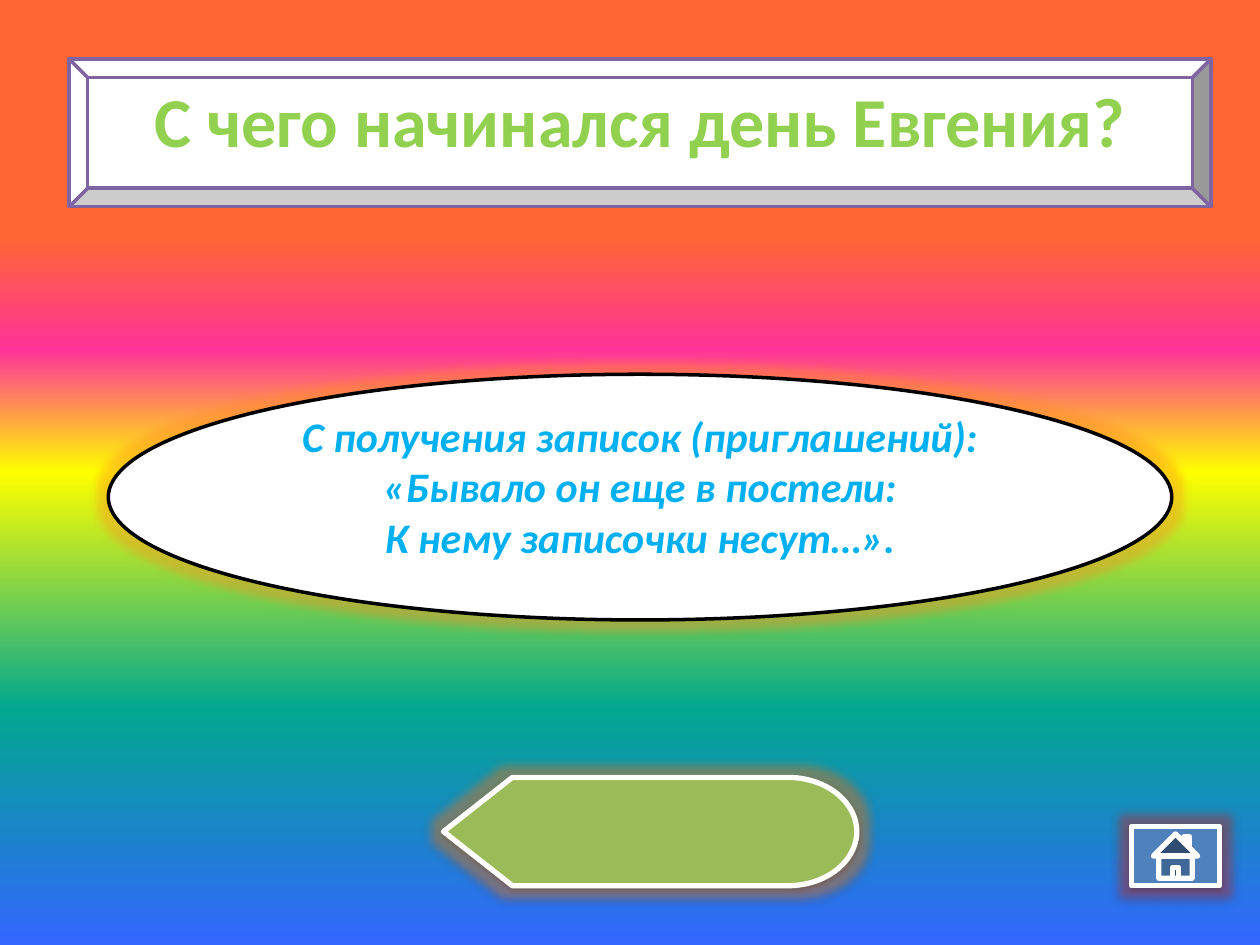
from dataclasses import dataclass
from typing import Optional

from lxml.etree import SubElement as Sub
from pptx import Presentation
from pptx.dml.color import RGBColor as RGB
from pptx.enum.shapes import MSO_SHAPE as Kind
from pptx.enum.text import MSO_ANCHOR as Anchor, PP_ALIGN as Align
from pptx.oxml.ns import qn
from pptx.util import Inches, Pt


@dataclass(frozen=True)
class Theme:
    font: str = "Calibri"
    white: str = "FFFFFF"
    black: str = "000000"
    purple: str = "8064A2"
    green: str = "9BBB59"
    blue: str = "4F81BD"
    lime: str = "92D050"
    sky: str = "00B0F0"
    orange: str = "FF8A24"
    red: str = "D03A36"
    head: int = 40
    body: int = 24
    # Background stops: percent and colour, from top to bottom
    stops: tuple = ((0, "FF6633"), (25, "FF6633"), (37, "FF3399"),
                    (50, "FFFF00"), (75, "01A78F"), (100, "3366FF"))


@dataclass(frozen=True)
class Text:
    lines: tuple[str, ...]
    size: int
    color: str
    slant: bool = False


@dataclass(frozen=True)
class Part:
    kind: Kind
    box: tuple[float, float, float, float]
    fill: str
    line: str
    width: float
    glow: Optional[str] = None
    shade: bool = False
    text: Optional[Text] = None


T = Theme()


def tint(node, color: str, alpha: int = 100) -> None:
    clr = Sub(node, qn("a:srgbClr"), val=color)
    if alpha < 100:
        Sub(clr, qn("a:alpha"), val=str(alpha * 1000))


def paint(slide) -> None:
    """Fill the background with the vertical rainbow."""
    fill = slide.background.fill
    fill.gradient()
    fill.gradient_angle = 270
    stops = slide.element.find(".//" + qn("a:gsLst"))
    for old in list(stops):
        stops.remove(old)
    for pos, color in T.stops:
        tint(Sub(stops, qn("a:gs"), pos=str(pos * 1000)), color)


def write(frame, text: Text) -> None:
    frame.word_wrap = True
    frame.vertical_anchor = Anchor.TOP
    frame.margin_top = frame.margin_bottom = 0
    for i, line in enumerate(text.lines):
        para = frame.add_paragraph() if i else frame.paragraphs[0]
        para.alignment = Align.CENTER
        run = para.add_run()
        run.text = line
        font = run.font
        font.name, font.size = T.font, Pt(text.size)
        font.bold, font.italic = True, text.slant
        font.color.rgb = RGB.from_string(text.color)


def draw(slide, part: Part) -> None:
    shape = slide.shapes.add_shape(part.kind, *map(Inches, part.box))
    shape.fill.solid()
    shape.fill.fore_color.rgb = RGB.from_string(part.fill)
    shape.line.color.rgb = RGB.from_string(part.line)
    shape.line.width = Pt(part.width)
    shape.shadow.inherit = False
    fx = shape.element.spPr.find(qn("a:effectLst"))
    if part.glow:
        tint(Sub(fx, qn("a:glow"), rad=str(Pt(11))), part.glow, 40)
    if part.shade:
        tint(Sub(fx, qn("a:outerShdw"), blurRad=str(Pt(3.1)),
                 dist=str(Pt(1.6)), dir="5400000", rotWithShape="0"),
             T.black, 38)
    if part.text:
        write(shape.text_frame, part.text)


PARTS = (
    # Question
    Part(Kind.BEVEL, (0.55, 0.47, 9.06, 1.17), T.white, T.purple, 2,
         text=Text(("С чего начинался день Евгения?",), T.head, T.lime)),
    # Back button
    Part(Kind.FLOWCHART_DISPLAY, (3.52, 6.17, 3.28, 0.86), T.green, T.white, 3,
         glow=T.orange, shade=True),
    # Answer
    Part(Kind.FLOWCHART_CONNECTOR, (0.86, 2.97, 8.44, 1.95), T.white, T.black,
         2, glow=T.orange,
         text=Text(("С получения записок (приглашений):",
                    "«Бывало он еще в постели:",
                    "К нему записочки несут…»."), T.body, T.sky, True)),
    # Home button
    Part(Kind.ACTION_BUTTON_HOME, (8.98, 6.56, 0.7, 0.47), T.blue, T.white, 3,
         glow=T.red, shade=True),
)


def main() -> None:
    deck = Presentation()
    deck.slide_width, deck.slide_height = Inches(10), Inches(7.5)
    slide = deck.slides.add_slide(deck.slide_layouts[6])
    paint(slide)
    for part in PARTS:
        draw(slide, part)
    deck.save("out.pptx")


if __name__ == "__main__":
    main()
